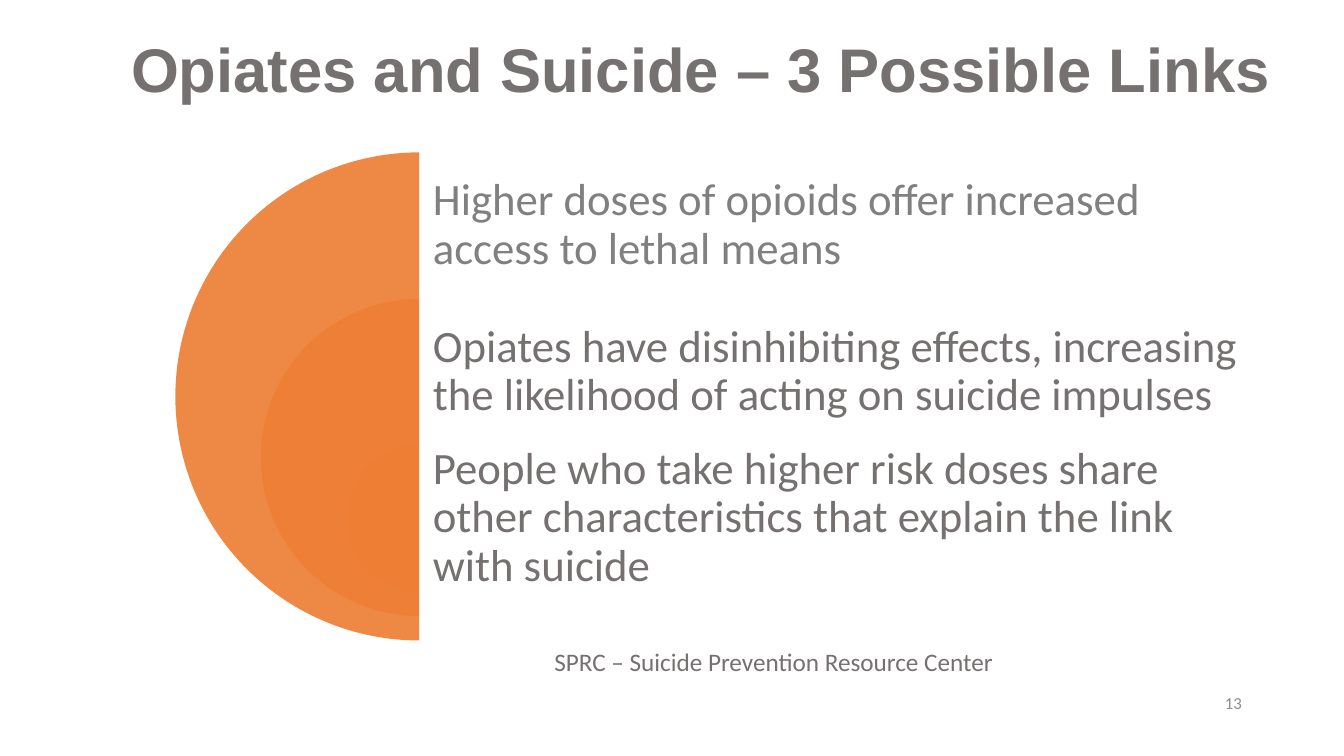
from lxml import etree
from pptx import Presentation
from pptx.dml.color import RGBColor
from pptx.enum.shapes import MSO_SHAPE
from pptx.enum.text import MSO_ANCHOR, MSO_AUTO_SIZE, PP_ALIGN
from pptx.oxml.ns import qn
from pptx.util import Cm, Pt

GREY = "767171"
ORANGE = "ED7D31"
WHITE = "FFFFFF"
LINKS = [
    ("Higher doses of opioids offer increased access to lethal means", "808080", 90),
    ("Opiates have disinhibiting effects, increasing the likelihood of acting "
     "on suicide impulses", GREY, 70),
    ("People who take higher risk doses share other characteristics that "
     "explain the link with suicide", GREY, 50),
]


def color(value):
    return RGBColor.from_string(value)


def write(box, text, size, ink, font="Calibri", bold=False,
          anchor=MSO_ANCHOR.MIDDLE, align=PP_ALIGN.LEFT, spacing=1.0):
    frame = box.text_frame
    frame.text = text
    frame.word_wrap = True
    frame.auto_size = MSO_AUTO_SIZE.NONE
    frame.vertical_anchor = anchor
    paragraph = frame.paragraphs[0]
    paragraph.alignment = align
    paragraph.line_spacing = spacing
    span = paragraph.runs[0]
    span.font.name = font
    span.font.size = Pt(size)
    span.font.bold = bold
    span.font.color.rgb = color(ink)


def add_tinted_shape(parent, kind, box, fill, opacity):
    """Add a borderless shape whose fill has the given opacity in percent."""
    shape = parent.shapes.add_shape(kind, *box)
    shape.shadow.inherit = False
    shape.line.fill.background()
    shape.fill.solid()
    shape.fill.fore_color.rgb = color(fill)
    tint = shape.fill._xPr.find(qn("a:solidFill"))[0]
    etree.SubElement(tint, qn("a:alpha")).set("val", str(opacity * 1000))
    return shape


def add_title(page, left, top, width, height):
    title = page.shapes.title
    title.left, title.top, title.width, title.height = left, top, width, height
    write(title, "Opiates and Suicide – 3 Possible Links", 44, GREY,
          font="Arial", bold=True, spacing=0.9)


def add_nested_links(page, left, top, width, height):
    """Stack shrinking half discs, each with a panel and text on its right."""
    group = page.shapes.add_group_shape()
    row = height * 0.3
    center = left + height // 2
    panel_width = left + width - center
    for index, (text, ink, opacity) in enumerate(LINKS):
        diameter = int(row * (1 + 7 / 6 * (len(LINKS) - 1 - index)))
        row_top = int(top + index * row)
        disc = add_tinted_shape(
            group, MSO_SHAPE.PIE,
            (center - diameter // 2, row_top, diameter, diameter), ORANGE, opacity)
        disc.adjustments[0] = 54
        disc.adjustments[1] = 162
        add_tinted_shape(group, MSO_SHAPE.RECTANGLE,
                         (center, row_top, panel_width, diameter), WHITE, 90)
        label = group.shapes.add_textbox(center, row_top, panel_width, int(row))
        frame = label.text_frame
        frame.margin_left = frame.margin_right = Cm(0.34)
        frame.margin_top = frame.margin_bottom = Cm(0.34)
        write(label, text, 32, ink, spacing=0.9)


def add_source(page, left, top, width, height):
    source = page.shapes.add_textbox(left, top, width, height)
    write(source, "SPRC – Suicide Prevention Resource Center", 18, GREY,
          anchor=MSO_ANCHOR.TOP)


def add_page_number(page, left, top, width, height):
    number = page.shapes.add_textbox(left, top, width, height)
    write(number, "13", 12, "8C8C8C", align=PP_ALIGN.RIGHT)


def main():
    deck = Presentation()
    deck.slide_width = Cm(33.87)
    deck.slide_height = Cm(19.05)
    page = deck.slides.add_slide(deck.slide_layouts[5])
    add_title(page, Cm(3.05), Cm(0.84), Cm(30.07), Cm(1.98))
    add_nested_links(page, Cm(4.42), Cm(3.84), Cm(27.38), Cm(12.3))
    add_source(page, Cm(13.72), Cm(16.15), Cm(12.93), Cm(1.02))
    add_page_number(page, Cm(23.93), Cm(17.2), Cm(7.62), Cm(1.02))
    deck.save("out.pptx")


if __name__ == "__main__":
    main()
